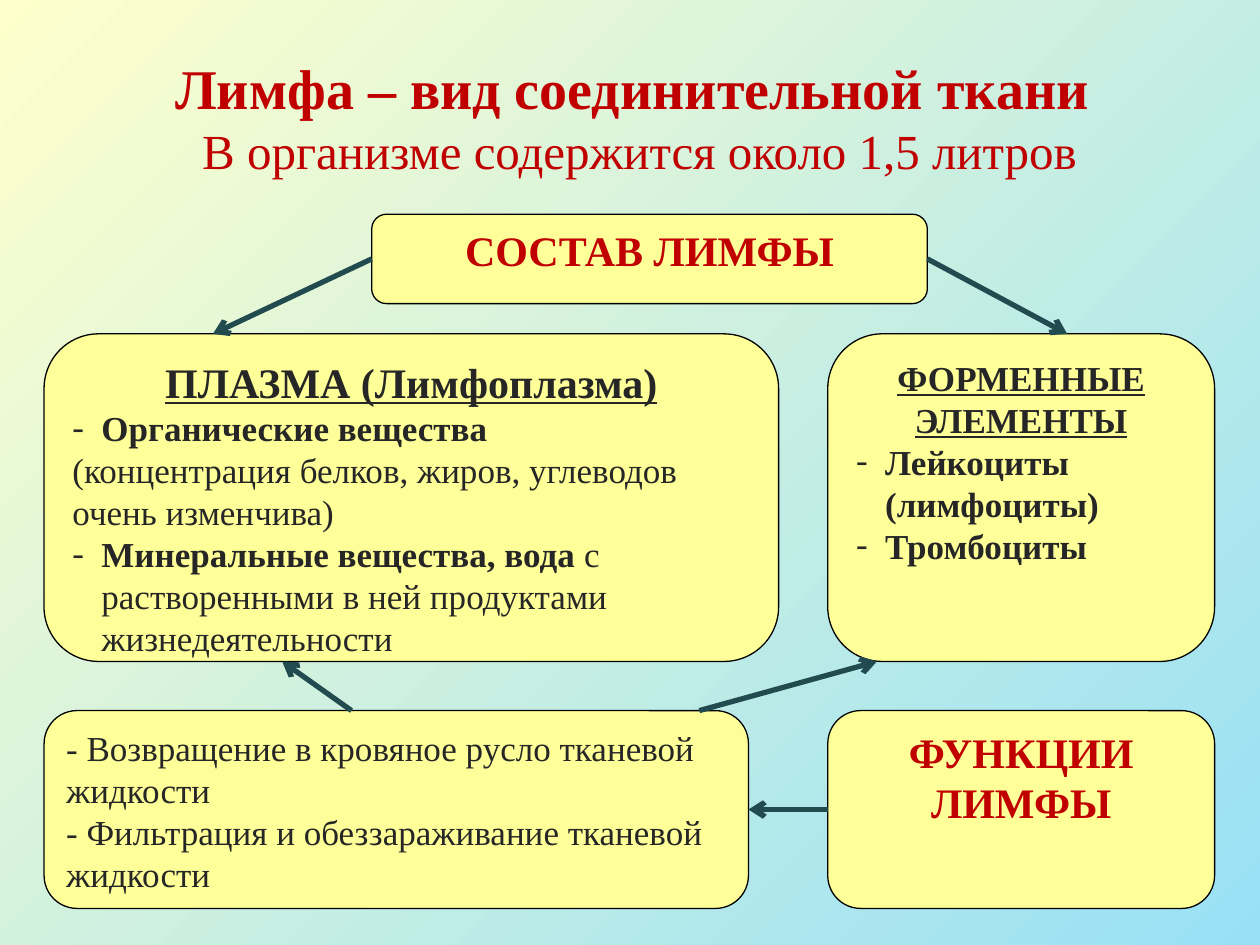
from pptx import Presentation
from pptx.dml.color import RGBColor
from pptx.enum.shapes import MSO_CONNECTOR, MSO_SHAPE
from pptx.enum.text import MSO_ANCHOR, PP_ALIGN
from pptx.oxml.ns import qn
from pptx.util import Inches, Pt
from lxml.etree import SubElement

RED = RGBColor(0xC0, 0x00, 0x00)
DARK = RGBColor(0x26, 0x26, 0x26)
YELLOW = RGBColor(0xFF, 0xFF, 0x99)
BLACK = RGBColor(0x00, 0x00, 0x00)
TEAL = RGBColor(0x22, 0x4B, 0x50)
SKY = RGBColor(0x98, 0xE0, 0xF6)
CREAM = RGBColor(0xFF, 0xFF, 0xCC)
FONT = "Times New Roman"
INDENT = Inches(0.23)


def add_run(p, text, size=20, color=DARK, bold=False, underline=False):
    r = p.add_run()
    r.text = text
    f = r.font
    f.name, f.size, f.bold, f.underline = FONT, Pt(size), bold, underline
    f.color.rgb = color


def add_para(tf, text, align=PP_ALIGN.LEFT, bullet=False, tail="", **fmt):
    p = tf.paragraphs[0] if not tf.paragraphs[0].runs else tf.add_paragraph()
    p.alignment = align
    add_run(p, text, **fmt)
    if tail:
        add_run(p, tail)
    if bullet:
        pPr = p._p.get_or_add_pPr()
        pPr.set("marL", str(INDENT))
        pPr.set("indent", str(-INDENT))
        SubElement(pPr, qn("a:buFont"), typeface=FONT)
        SubElement(pPr, qn("a:buChar"), char="-")
    return p


def add_heading(tf, text, **fmt):
    add_para(tf, text, align=PP_ALIGN.CENTER, bold=True, **fmt)


def add_box(s, x, y, w, h):
    sp = s.shapes.add_shape(MSO_SHAPE.ROUNDED_RECTANGLE, Inches(x), Inches(y), Inches(w), Inches(h))
    sp.shadow.inherit = False
    sp.fill.solid()
    sp.fill.fore_color.rgb = YELLOW
    sp.line.color.rgb = BLACK
    sp.line.width = Pt(0.75)
    sp.text_frame.word_wrap = True
    sp.text_frame.vertical_anchor = MSO_ANCHOR.TOP
    return sp


def add_arrow(s, x1, y1, x2, y2, start=None, end=None):
    c = s.shapes.add_connector(MSO_CONNECTOR.STRAIGHT, Inches(x1), Inches(y1), Inches(x2), Inches(y2))
    c.line.color.rgb = TEAL
    c.line.width = Pt(3)
    if start:
        c.begin_connect(*start)
    if end:
        c.end_connect(*end)
    SubElement(c.line._get_or_add_ln(), qn("a:tailEnd"), type="arrow")
    SubElement(c._element.spPr, qn("a:effectLst"))


def add_background(s):
    fill = s.background.fill
    fill.gradient()
    fill.gradient_angle = 135
    for stop, color in zip(fill.gradient_stops, (SKY, CREAM)):
        stop.color.rgb = color


def add_title(s, x, y, w, h):
    tf = s.shapes.add_textbox(Inches(x), Inches(y), Inches(w), Inches(h)).text_frame
    tf.word_wrap = True
    tf.vertical_anchor = MSO_ANCHOR.MIDDLE
    p = add_para(tf, "Лимфа – вид соединительной ткани ", align=PP_ALIGN.CENTER,
                 size=32, color=RED, bold=True)
    p.add_line_break()
    add_run(p, "В организме содержится около 1,5 литров", size=28, color=RED)


def add_label(s, text, *box):
    sp = add_box(s, *box)
    add_heading(sp.text_frame, text, size=24, color=RED)
    return sp


def add_plasma(s, *box):
    tf = add_box(s, *box).text_frame
    add_heading(tf, "ПЛАЗМА (Лимфоплазма)", size=24, underline=True)
    add_para(tf, "Органические вещества", bullet=True, bold=True)
    add_para(tf, "(концентрация белков, жиров, углеводов очень изменчива)")
    add_para(tf, "Минеральные вещества, вода ", bullet=True, bold=True,
             tail="с растворенными в ней продуктами жизнедеятельности")


def add_cells(s, *box):
    tf = add_box(s, *box).text_frame
    add_heading(tf, "ФОРМЕННЫЕ ЭЛЕМЕНТЫ", underline=True)
    for text in ("Лейкоциты (лимфоциты)", "Тромбоциты"):
        add_para(tf, text, bullet=True, bold=True)


def add_functions(s, *box):
    sp = add_box(s, *box)
    for text in ("- Возвращение в кровяное русло тканевой жидкости",
                 "- Фильтрация и обеззараживание тканевой жидкости"):
        add_para(sp.text_frame, text)
    return sp


def main():
    prs = Presentation()
    prs.slide_width, prs.slide_height = Inches(10), Inches(7.5)
    s = prs.slides.add_slide(prs.slide_layouts[6])
    left, right, right_w = 0.35, 6.57, 3.07
    mid_y, mid_h, low_y, low_h = 2.65, 2.6, 5.64, 1.57
    mid_end = mid_y + mid_h

    add_background(s)
    add_title(s, left, 0.3, 9.45, 1.25)
    composition = add_label(s, "СОСТАВ ЛИМФЫ", 2.95, 1.7, 4.41, 0.71)
    add_plasma(s, left, mid_y, 5.83, mid_h)
    add_cells(s, right, mid_y, right_w, mid_h)
    functions = add_functions(s, left, low_y, 5.59, low_h)
    label = add_label(s, "ФУНКЦИИ ЛИМФЫ", right, low_y, right_w, low_h)

    add_arrow(s, 7.36, 2.06, 8.47, mid_y, start=(composition, 3))
    add_arrow(s, 2.95, 2.06, 1.69, mid_y, start=(composition, 1))
    add_arrow(s, 2.79, low_y, 2.24, mid_end)
    add_arrow(s, 5.55, low_y, 6.96, mid_end)
    add_arrow(s, right, 6.43, 5.94, 6.43, start=(label, 1), end=(functions, 3))

    prs.save("out.pptx")


if __name__ == "__main__":
    main()
